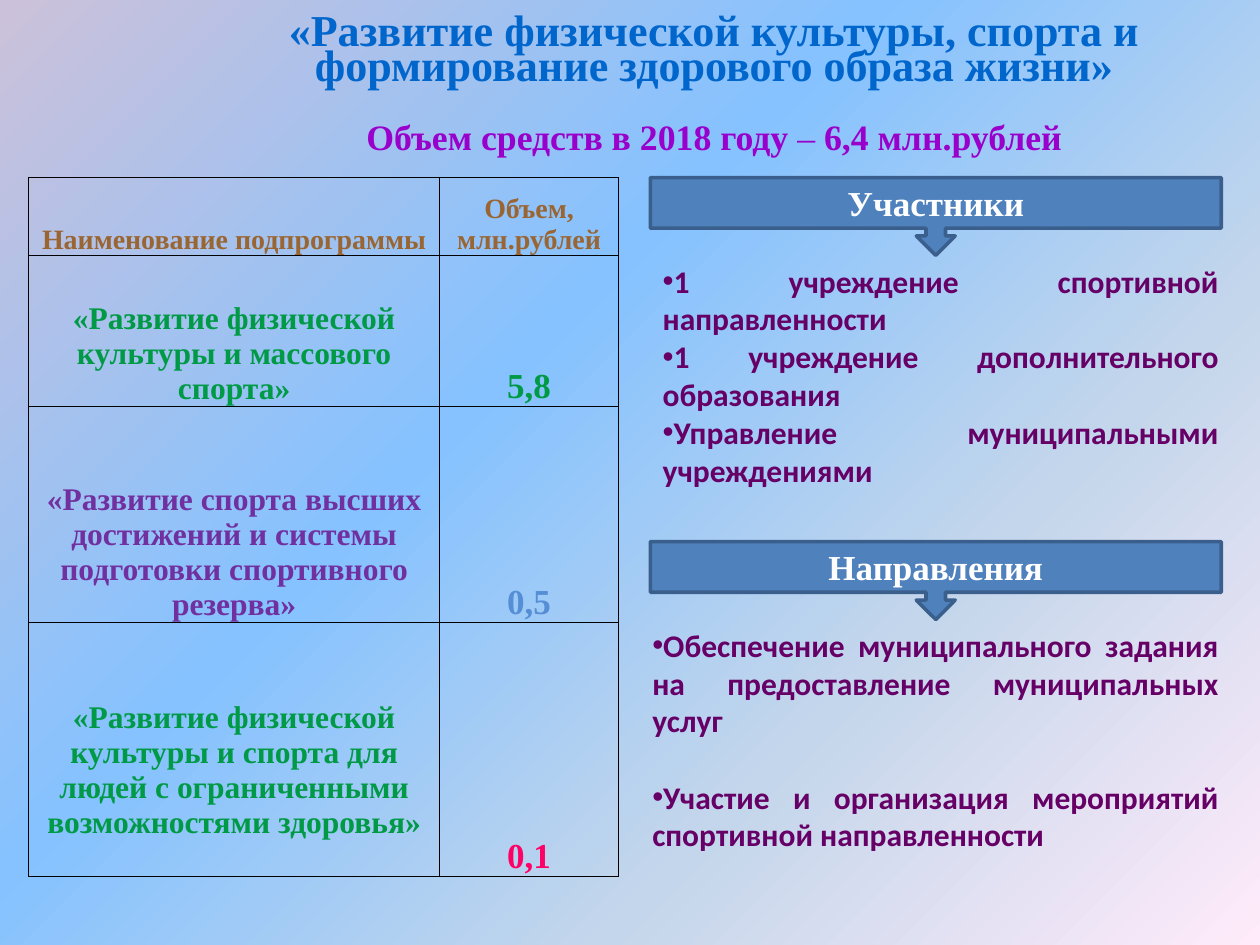
from lxml.etree import SubElement
from pptx import Presentation
from pptx.dml.color import RGBColor
from pptx.enum.shapes import MSO_SHAPE as Preset
from pptx.enum.text import MSO_ANCHOR as Anchor, PP_ALIGN as Align
from pptx.oxml.ns import qn
from pptx.util import Cm, Pt

COLORS = {
    "title": "0066CC", "total": "9900CC", "header": "996633", "green": "009A46",
    "violet": "7030A0", "blue": "558ED5", "pink": "FF0066", "list": "660066",
    "white": "FFFFFF", "callout": "4F81BD", "outline": "3A5F8C", "border": "000000",
}
BACKGROUND = [(0, "CCC1DA"), (40, "85C2FF"), (70, "C4D6EB"), (100, "FFEBFA")]
SERIF, SANS = "Times New Roman", "Calibri"

TITLE = "«Развитие физической культуры, спорта и формирование здорового образа жизни»"
TOTAL = [("Объем средств в 2018 году ", True), ("– ", False), ("6,4 млн.рублей", True)]

# Each cell: text, size, colour
TABLE = [
    [("Наименование подпрограммы", 16, "header"), ("Объем, млн.рублей", 16, "header")],
    [("«Развитие физической культуры и массового спорта»", 18, "green"),
     ("5,8", 20, "green")],
    [("«Развитие спорта высших достижений и системы подготовки спортивного резерва»",
      18, "violet"), ("0,5", 20, "blue")],
    [("«Развитие физической культуры и спорта для людей с ограниченными "
      "возможностями здоровья»", 18, "green"), ("0,1", 20, "pink")],
]
COLUMN_WIDTHS = [8.28, 3.61]
ROW_HEIGHTS = [1.57, 3.04, 4.35, 5.12]
TABLE_LEFT, CONTENT_TOP = 0.58, 3.58
CALLOUT_LEFT, CALLOUT_WIDTH, CALLOUT_HEIGHT = 13.11, 11.51, 1.57
LIST_RIGHT = 24.82

SECTIONS = [
    {"heading": "Участники", "top": CONTENT_TOP, "list_left": 13.11,
     "list_height": 4.88, "gap": 0,
     "items": ["1 учреждение спортивной направленности",
               "1 учреждение дополнительного образования",
               "Управление муниципальными учреждениями"]},
    {"heading": "Направления", "top": 10.92, "list_left": 12.9,
     "list_height": 5.64, "gap": 22,
     "items": ["Обеспечение муниципального задания на предоставление муниципальных услуг",
               "Участие и организация мероприятий спортивной направленности"]},
]


def rgb(name):
    return RGBColor.from_string(COLORS[name])


def apply(target, values):
    for name, value in values.items():
        setattr(target, name, value)


def write(para, text, size, color, font=SERIF, bold=True, align=Align.CENTER):
    para.alignment = align
    span = para.add_run()
    span.text = text
    apply(span.font, {"name": font, "size": Pt(size), "bold": bold})
    span.font.color.rgb = rgb(color)


def add_text_frame(page, left, top, width, height, **values):
    box = page.shapes.add_textbox(Cm(left), Cm(top), Cm(width), Cm(height))
    apply(box.text_frame, {"word_wrap": True, **values})
    return box.text_frame


def paint_background(page):
    fill = page.background.fill
    fill.gradient()
    gradient = page.background._cSld.find(".//" + qn("a:gradFill"))
    stops = gradient.find(qn("a:gsLst"))
    for stop in list(stops):
        stops.remove(stop)
    for position, color in BACKGROUND:
        stop = SubElement(stops, qn("a:gs"), pos=str(position * 1000))
        SubElement(stop, qn("a:srgbClr"), val=color)
    gradient.find(qn("a:lin")).set("ang", str(45 * 60000))


def add_borders(cell):
    properties = cell._tc.get_or_add_tcPr()
    for side in ("lnL", "lnR", "lnT", "lnB"):
        line = SubElement(properties, qn("a:" + side), w=str(Pt(0.5)))
        fill = SubElement(line, qn("a:solidFill"))
        SubElement(fill, qn("a:srgbClr"), val=COLORS["border"])


def add_bullet(para):
    properties = para._p.get_or_add_pPr()
    apply_to = {"marL": "0", "indent": "0"}
    for name, value in apply_to.items():
        properties.set(name, value)
    SubElement(properties, qn("a:buFont"), typeface="Arial")
    SubElement(properties, qn("a:buChar"), char="•")


def add_budget_table(page):
    frame = page.shapes.add_table(
        len(TABLE), len(COLUMN_WIDTHS), Cm(TABLE_LEFT), Cm(CONTENT_TOP),
        Cm(sum(COLUMN_WIDTHS)), Cm(sum(ROW_HEIGHTS)))
    table = frame.table
    apply(table, {"first_row": False, "horz_banding": False})
    for column, width in zip(table.columns, COLUMN_WIDTHS):
        column.width = Cm(width)
    for row, height, contents in zip(table.rows, ROW_HEIGHTS, TABLE):
        row.height = Cm(height)
        for cell, content in zip(row.cells, contents):
            apply(cell, {"vertical_anchor": Anchor.BOTTOM, "margin_left": Cm(0.03),
                         "margin_right": Cm(0.03), "margin_top": Cm(0.03),
                         "margin_bottom": 0})
            add_borders(cell)
            cell.fill.background()
            write(cell.text_frame.paragraphs[0], *content)
    # The last name stands one line above the bottom edge
    table.cell(len(TABLE) - 1, 0).margin_bottom = Cm(0.72)


def add_section(page, section):
    """Draw a callout heading with its bulleted list below."""
    callout = page.shapes.add_shape(
        Preset.DOWN_ARROW_CALLOUT, Cm(CALLOUT_LEFT), Cm(section["top"]),
        Cm(CALLOUT_WIDTH), Cm(CALLOUT_HEIGHT))
    callout.shadow.inherit = False
    callout.fill.solid()
    callout.fill.fore_color.rgb = rgb("callout")
    callout.line.color.rgb = rgb("outline")
    callout.line.width = Pt(2)
    callout.text_frame.vertical_anchor = Anchor.MIDDLE
    write(callout.text_frame.paragraphs[0], section["heading"], 20, "white")

    left = section["list_left"]
    text = add_text_frame(page, left, section["top"] + CALLOUT_HEIGHT,
                          LIST_RIGHT - left, section["list_height"])
    for index, item in enumerate(section["items"]):
        para = text.add_paragraph() if index else text.paragraphs[0]
        para.space_before = Pt(section["gap"] if index else 0)
        write(para, item, 18, "list", font=SANS, align=Align.JUSTIFY)
        add_bullet(para)


def main():
    deck = Presentation()
    apply(deck, {"slide_width": Cm(25.4), "slide_height": Cm(19.05)})
    page = deck.slides.add_slide(deck.slide_layouts[6])
    paint_background(page)

    title = add_text_frame(page, 4.17, 0.41, 20.45, 1.4,
                           vertical_anchor=Anchor.MIDDLE).paragraphs[0]
    title.line_spacing = Pt(20)
    write(title, TITLE, 25.2, "title")

    total = add_text_frame(page, 4.17, 2.18, 20.45, 0.99).paragraphs[0]
    total.space_before = Pt(4)
    for text, bold in TOTAL:
        write(total, text, 20.4, "total", bold=bold)

    add_budget_table(page)
    for section in SECTIONS:
        add_section(page, section)
    deck.save("out.pptx")


if __name__ == "__main__":
    main()
